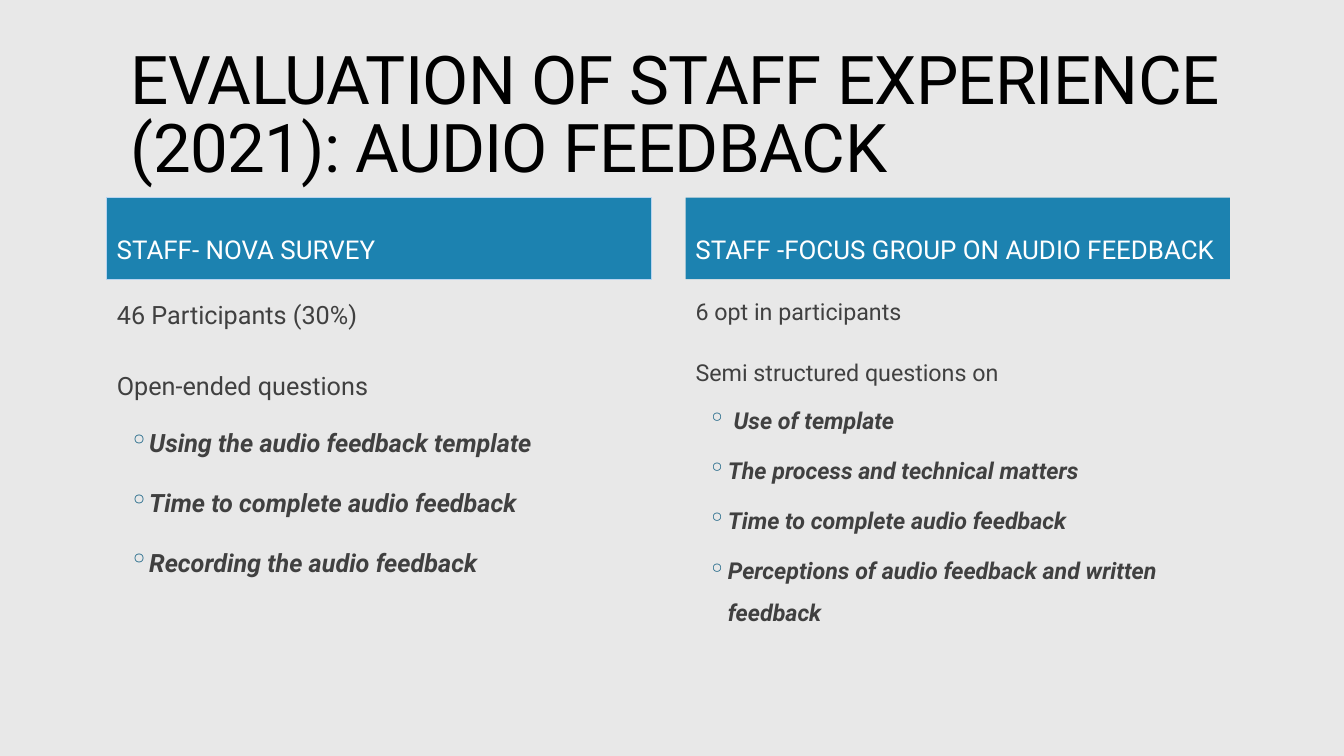
from dataclasses import dataclass

from lxml import etree
from pptx import Presentation
from pptx.dml.color import RGBColor
from pptx.enum import shapes, text
from pptx.oxml.ns import qn
from pptx.util import Inches, Pt

FONT = "Roboto"
COLORS = {
    "background": "E8E8E8",
    "title": "000000",
    "header": "1C82B0",
    "header_line": "B8D4F0",
    "header_text": "FFFFFF",
    "body": "404040",
    "bullet": "156082",
}
COLUMN_WIDTH = 5.4
HEADER_TOP, HEADER_HEIGHT = 1.96, 0.81
BODY_HEIGHT = 3.69


@dataclass
class Column:
    left: float
    body_top: float
    header: str
    outlined: bool
    size: float
    line_spacing: float
    statements: list[str]
    topics: list[str]


COLUMNS = [
    Column(1.06, 2.71, "STAFF- NOVA SURVEY", True, 18, 1.7,
           ["46 Participants (30%)", "Open-ended questions"],
           ["Using the audio feedback template",
            "Time to complete audio feedback",
            "Recording the audio feedback"]),
    Column(6.8, 2.76, "STAFF -FOCUS GROUP ON AUDIO FEEDBACK", False, 16.6, 1.5,
           ["6 opt in participants", "Semi structured questions on"],
           [" Use of template",
            "The process and technical matters",
            "Time to complete audio feedback",
            "Perceptions of audio feedback and written feedback"]),
]


def color(name: str) -> RGBColor:
    return RGBColor.from_string(COLORS[name])


def style_font(paragraph, size: float, color_name: str) -> None:
    paragraph.font.name = FONT
    paragraph.font.size = Pt(size)
    paragraph.font.color.rgb = color(color_name)


def set_indent(paragraph, margin: float, hanging: float) -> None:
    properties = paragraph._p.get_or_add_pPr()
    properties.set("marL", str(Inches(margin)))
    properties.set("indent", str(-Inches(hanging)))


def add_bullet(paragraph) -> None:
    properties = paragraph._p.get_or_add_pPr()
    bullet_color = etree.SubElement(properties, qn("a:buClr"))
    etree.SubElement(bullet_color, qn("a:srgbClr"), val=COLORS["bullet"])
    etree.SubElement(properties, qn("a:buChar"), char="◦")


def add_title(slide, wording: str) -> None:
    shape = slide.shapes.add_textbox(Inches(1.2), Inches(0.31), Inches(11), Inches(1.59))
    frame = shape.text_frame
    frame.word_wrap = True
    frame.vertical_anchor = text.MSO_ANCHOR.BOTTOM
    paragraph = frame.paragraphs[0]
    run = paragraph.add_run()
    run.text = wording
    run._r.get_or_add_rPr().set("spc", "-50")
    paragraph.line_spacing = 0.85
    style_font(paragraph, 48, "title")


def add_header(slide, column: Column) -> None:
    shape = slide.shapes.add_shape(
        shapes.MSO_SHAPE.RECTANGLE, Inches(column.left), Inches(HEADER_TOP),
        Inches(COLUMN_WIDTH), Inches(HEADER_HEIGHT))
    shape.shadow.inherit = False
    shape.fill.solid()
    shape.fill.fore_color.rgb = color("header")
    if column.outlined:
        shape.line.color.rgb = color("header_line")
        shape.line.width = Pt(0.75)
    else:
        shape.line.fill.background()
    frame = shape.text_frame
    frame.word_wrap = True
    frame.vertical_anchor = text.MSO_ANCHOR.MIDDLE
    frame.margin_top = Inches(0.26)
    paragraph = frame.paragraphs[0]
    paragraph.text = column.header
    paragraph.alignment = text.PP_ALIGN.LEFT
    style_font(paragraph, 18.5, "header_text")


def add_body(slide, column: Column) -> None:
    shape = slide.shapes.add_textbox(
        Inches(column.left), Inches(column.body_top),
        Inches(COLUMN_WIDTH), Inches(BODY_HEIGHT))
    frame = shape.text_frame
    frame.word_wrap = True
    frame.margin_left = frame.margin_right = 0
    for index, wording in enumerate(column.statements + column.topics):
        is_topic = index >= len(column.statements)
        paragraph = frame.add_paragraph() if index else frame.paragraphs[0]
        paragraph.text = wording
        paragraph.line_spacing = column.line_spacing
        if index:
            paragraph.space_before = Pt(2 if is_topic else 12)
        paragraph.space_after = Pt(4 if is_topic else 2)
        if is_topic:
            paragraph.level = 1
            set_indent(paragraph, 0.42, 0.2)
            add_bullet(paragraph)
            paragraph.font.bold = paragraph.font.italic = True
        else:
            set_indent(paragraph, 0.1, 0)
        style_font(paragraph, column.size, "body")


def main() -> None:
    presentation = Presentation()
    presentation.slide_width = Inches(13.33)
    presentation.slide_height = Inches(7.5)
    slide = presentation.slides.add_slide(presentation.slide_layouts[6])
    slide.background.fill.solid()
    slide.background.fill.fore_color.rgb = color("background")

    # Title
    add_title(slide, "EVALUATION OF STAFF EXPERIENCE (2021): AUDIO FEEDBACK")

    # Survey and focus group columns
    for column in COLUMNS:
        add_header(slide, column)
        add_body(slide, column)

    presentation.save("out.pptx")


if __name__ == "__main__":
    main()
